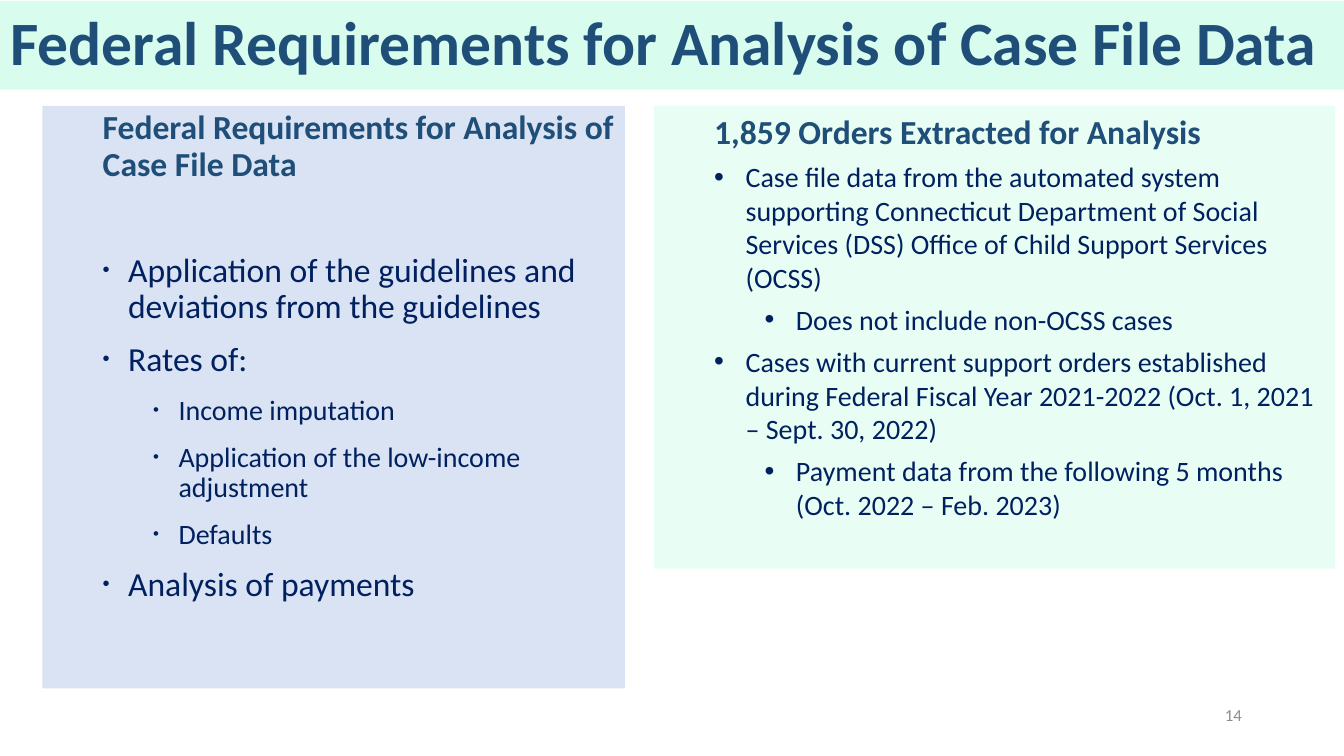
"""Builds the slide on federal requirements for analysing case file data."""
from dataclasses import dataclass

from lxml import etree
from pptx import Presentation
from pptx.dml.color import RGBColor
from pptx.enum.text import MSO_ANCHOR, MSO_AUTO_SIZE, PP_ALIGN
from pptx.oxml.ns import qn
from pptx.util import Cm, Pt

MIDDLE = MSO_ANCHOR.MIDDLE
TOP = MSO_ANCHOR.TOP
NO_FIT = MSO_AUTO_SIZE.NONE
LEFT = PP_ALIGN.LEFT
RIGHT = PP_ALIGN.RIGHT
TITLE_ONLY = 5


@dataclass(frozen=True)
class Theme:
    """Colours, font and type sizes of the slide."""
    font: str = "Calibri"
    heading: str = "1F4E79"
    body: str = "002060"
    muted: str = "8C8C8C"
    banner: str = "D8FCEE"
    blue_panel: str = "DAE3F3"
    mint_panel: str = "E8FEF4"
    title_size: int = 44
    large: int = 24
    medium: int = 20
    small: int = 12


@dataclass(frozen=True)
class ListStyle:
    """Spacing and bullet settings of one panel."""
    fill: str
    sizes: tuple
    hanging: float
    line_spacing: float
    gap: int
    first_gap: int
    bullet_scale: int


class SlideBuilder:
    """Holds the theme and the current slide."""

    def __init__(self, deck, theme):
        self.theme = theme
        self.page = deck.slides.add_slide(deck.slide_layouts[TITLE_ONLY])

    def place(self, shape, left, top, width, height):
        """Moves a shape to a position in centimetres."""
        shape.left, shape.top = Cm(left), Cm(top)
        shape.width, shape.height = Cm(width), Cm(height)

    def fill(self, shape, colour):
        """Gives a shape a solid fill."""
        shape.fill.solid()
        shape.fill.fore_color.rgb = RGBColor.from_string(colour)

    def style(self, para, size, colour, bold=False, align=LEFT):
        """Sets the font and alignment of a paragraph."""
        para.alignment = align
        font = para.font
        font.name, font.size, font.bold = self.theme.font, Pt(size), bold
        font.color.rgb = RGBColor.from_string(colour)

    def frame(self, shape, anchor):
        """Prepares the text frame of a shape."""
        frame = shape.text_frame
        frame.word_wrap = True
        frame.auto_size = NO_FIT
        frame.vertical_anchor = anchor
        return frame

    def title(self, text, bounds):
        """Fills the title placeholder."""
        title = self.page.shapes.title
        self.place(title, *bounds)
        self.fill(title, self.theme.banner)
        para = self.frame(title, MIDDLE).paragraphs[0]
        para.text = text
        para.line_spacing = 0.9
        self.style(para, self.theme.title_size, self.theme.heading, bold=True)

    def page_number(self, text, bounds):
        """Adds the slide number."""
        box = self.page.shapes.add_textbox(*map(Cm, bounds))
        para = self.frame(box, MIDDLE).paragraphs[0]
        para.text = text
        self.style(para, self.theme.small, self.theme.muted, align=RIGHT)

    def indent(self, para, margin, hanging=0.0):
        """Sets the left margin and hanging indent of a paragraph."""
        properties = para._p.get_or_add_pPr()
        properties.set("marL", str(Cm(margin)))
        properties.set("indent", str(-Cm(hanging)))
        return properties

    def bullet(self, para, level, look):
        """Adds an indented bullet to a paragraph."""
        para.level = level
        properties = self.indent(para, 1.27 * level + look.hanging, look.hanging)
        colour = etree.SubElement(properties, qn("a:buClr"))
        etree.SubElement(colour, qn("a:srgbClr"), val=self.theme.body)
        etree.SubElement(properties, qn("a:buSzPct"), val=str(look.bullet_scale * 1000))
        etree.SubElement(properties, qn("a:buFont"), typeface="Arial")
        etree.SubElement(properties, qn("a:buChar"), char="•")

    def panel(self, heading, items, bounds, look):
        """Adds a filled panel with a heading and a two-level list."""
        box = self.page.shapes.add_textbox(*map(Cm, bounds))
        self.fill(box, look.fill)
        frame = self.frame(box, TOP)
        para = frame.paragraphs[0]
        para.text = heading
        para.line_spacing, para.space_before = look.line_spacing, Pt(look.gap)
        para.level = 1
        self.indent(para, 1.27)
        self.style(para, self.theme.large, self.theme.heading, bold=True)
        for number, (level, text) in enumerate(items):
            para = frame.add_paragraph()
            para.text = text
            para.line_spacing = look.line_spacing
            para.space_before = Pt(look.gap if number else look.first_gap)
            self.bullet(para, level, look)
            self.style(para, look.sizes[level - 1], self.theme.body)


REQUIREMENTS = [
    (1, "Application of the guidelines and deviations from the guidelines"),
    (1, "Rates of:"),
    (2, "Income imputation"),
    (2, "Application of the low-income adjustment"),
    (2, "Defaults"),
    (1, "Analysis of payments"),
]
ORDERS = [
    (1, "Case file data from the automated system supporting Connecticut Department "
        "of Social Services (DSS) Office of Child Support Services (OCSS)"),
    (2, "Does not include non-OCSS cases"),
    (1, "Cases with current support orders established during Federal Fiscal Year "
        "2021-2022 (Oct. 1, 2021 – Sept. 30, 2022)"),
    (2, "Payment data from the following 5 months (Oct. 2022 – Feb. 2023)"),
]


def main():
    """Builds and saves the deck."""
    deck = Presentation()
    deck.slide_width, deck.slide_height = Cm(33.87), Cm(19.05)
    theme = Theme()
    builder = SlideBuilder(deck, theme)
    heading = "Federal Requirements for Analysis of Case File Data"
    builder.title(heading, (0, 0.02, 33.87, 2.24))
    builder.page_number("14", (30.33, 17.7, 1.22, 0.61))
    blue = ListStyle(theme.blue_panel, (theme.large, theme.medium), 0.64, 0.9, 12, 50, 60)
    mint = ListStyle(theme.mint_panel, (theme.medium, theme.medium), 0.79, 1.0, 6, 6, 100)
    builder.panel(heading, REQUIREMENTS, (1.07, 2.67, 14.68, 14.68), blue)
    builder.panel("1,859 Orders Extracted for Analysis", ORDERS,
                  (16.48, 2.67, 17.17, 11.66), mint)
    deck.save("out.pptx")


if __name__ == "__main__":
    main()
